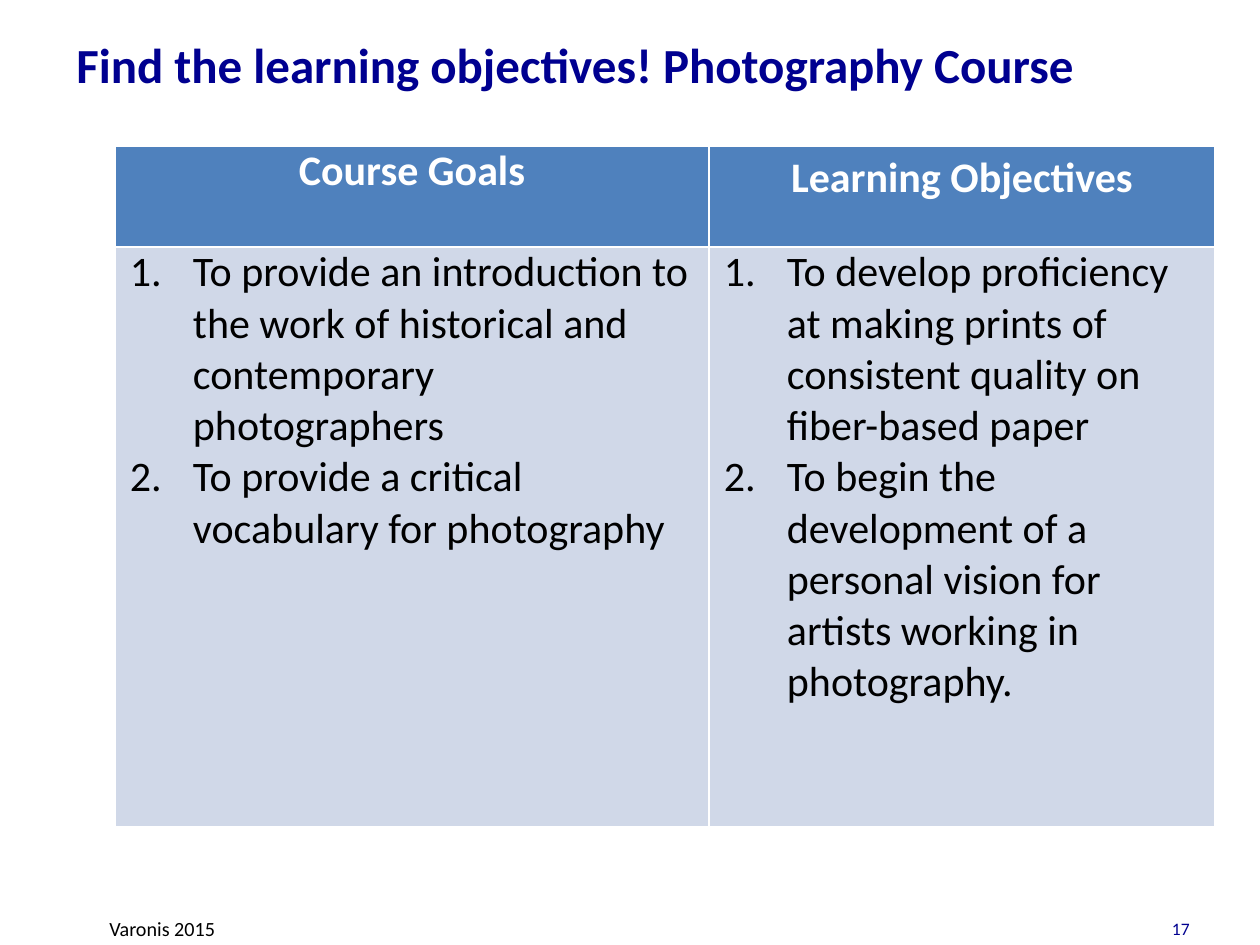
from lxml.etree import SubElement
from pptx import Presentation
from pptx.dml.color import RGBColor
from pptx.enum.text import MSO_ANCHOR, PP_ALIGN
from pptx.oxml.ns import qn
from pptx.util import Emu, Pt

NAVY = RGBColor(0x00, 0x00, 0x90)
BLACK = RGBColor(0x00, 0x00, 0x00)
WHITE = RGBColor(0xFF, 0xFF, 0xFF)
BLUE = RGBColor(0x4F, 0x81, 0xBD)
PALE = RGBColor(0xD0, 0xD8, 0xE8)


def px(n):
    return Emu(round(n * 914400 / 126))


def style(p, size, color, bold=False):
    for r in p.runs:
        r.font.name = "Calibri"
        r.font.size = Pt(size)
        r.font.bold = bold
        r.font.color.rgb = color


prs = Presentation()
prs.slide_width, prs.slide_height = px(1260), px(945)
s = prs.slides.add_slide(prs.slide_layouts[6])

# Title, footer and slide number
texts = [
    ("Find the learning objectives! Photography Course", (64, 6, 1196, 116),
     28, NAVY, True, PP_ALIGN.LEFT, MSO_ANCHOR.MIDDLE),
    ("Varonis 2015", (97, 910, 1057, 36),
     11.5, BLACK, False, PP_ALIGN.LEFT, MSO_ANCHOR.TOP),
    ("17", (1154, 911, 48, 34),
     10, NAVY, False, PP_ALIGN.RIGHT, MSO_ANCHOR.MIDDLE),
]
for text, box, size, color, bold, align, anchor in texts:
    tf = s.shapes.add_textbox(*map(px, box)).text_frame
    tf.word_wrap = True
    tf.vertical_anchor = anchor
    p = tf.paragraphs[0]
    p.text = text
    p.alignment = align
    style(p, size, color, bold)

# Table of goals and objectives
columns = [
    ("Course Goals", 594, [
        "To provide an introduction to the work of historical and "
        "contemporary photographers",
        "To provide a critical vocabulary for photography",
    ]),
    ("Learning Objectives", 506, [
        "To develop proficiency at making prints of consistent quality on "
        "fiber-based paper",
        "To begin the development of a personal vision for artists working "
        "in photography.",
    ]),
]
table = s.shapes.add_table(2, 2, px(115), px(146), px(1100), px(681)).table
table.rows[0].height, table.rows[1].height = px(101), px(580)

for col, (heading, width, items) in enumerate(columns):
    table.columns[col].width = px(width)
    head, body = table.cell(0, col), table.cell(1, col)
    for cell, fill in ((head, BLUE), (body, PALE)):
        cell.fill.solid()
        cell.fill.fore_color.rgb = fill
        # The second heading keeps the default cell margins
        if cell is body or col == 0:
            cell.margin_left = cell.margin_right = px(15)
            cell.margin_top = cell.margin_bottom = 0

    p = head.text_frame.paragraphs[0]
    p.text = heading
    p.alignment = PP_ALIGN.CENTER
    style(p, 24, WHITE, True)

    # Numbered items with a hanging indent
    body.text_frame.text = "\n".join(items)
    for p in body.text_frame.paragraphs:
        pPr = p._p.get_or_add_pPr()
        pPr.set("marL", str(px(63)))
        pPr.set("indent", str(-px(63)))
        SubElement(pPr, qn("a:buFont"), typeface="+mj-lt")
        SubElement(pPr, qn("a:buAutoNum"), type="arabicPeriod")
        style(p, 24, BLACK)

prs.save("out.pptx")
